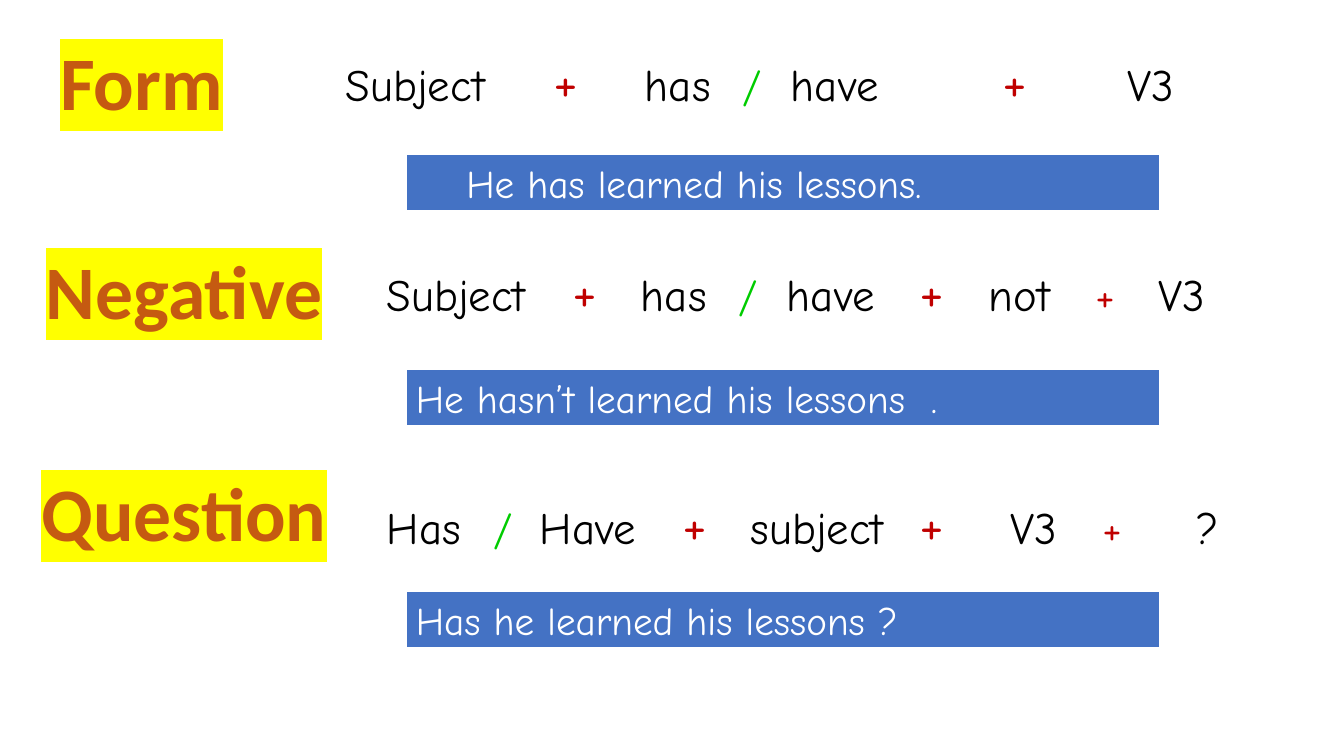
from dataclasses import dataclass

from lxml.etree import SubElement
from pptx import Presentation
from pptx.dml.color import RGBColor as RGB
from pptx.enum.shapes import MSO_SHAPE as Shape
from pptx.enum.text import MSO_ANCHOR as Anchor, MSO_AUTO_SIZE as Auto, PP_ALIGN as Align
from pptx.oxml import parse_xml
from pptx.oxml.ns import nsdecls, qn
from pptx.util import Emu, Pt

SCALE = 914400 / 100.8


def px(count):
    return Emu(round(count * SCALE))


@dataclass(frozen=True)
class Theme:
    ink: str = "000000"
    white: str = "FFFFFF"
    blue: str = "4472C4"
    rust: str = "C55A11"
    yellow: str = "FFFF00"
    red: str = "C00000"
    green: str = "00CC00"
    head_font: str = "Calibri"
    body_font: str = "Comic Neue"
    head_size: int = 54
    plus_size: int = 40
    word_size: int = 32
    bar_size: int = 28


class Board:
    def __init__(self, slide, theme):
        self.slide = slide
        self.theme = theme

    def style(self, run, font, size, color, bold=None):
        run.font.name = font
        run.font.size = Pt(size)
        run.font.color.rgb = RGB.from_string(color)
        run.font.bold = bold

    def box(self, left, top, width, height):
        shape = self.slide.shapes.add_textbox(px(left), px(top), px(width), px(height))
        frame = shape.text_frame
        frame.word_wrap = True
        frame.auto_size = Auto.SHAPE_TO_FIT_TEXT
        return frame

    def heading(self, text, left, top, width):
        theme = self.theme
        para = self.box(left, top, width, 102).paragraphs[0]
        para.text = text
        para.alignment = Align.CENTER
        run = para.runs[0]
        self.style(run, theme.head_font, theme.head_size, theme.rust, True)
        props = run.font._element
        props.insert(0, parse_xml(
            f'<a:ln w="9525" {nsdecls("a")}><a:solidFill>'
            f'<a:srgbClr val="{theme.white}"/></a:solidFill></a:ln>'))
        props.find(qn("a:solidFill")).addnext(parse_xml(
            f'<a:highlight {nsdecls("a")}><a:srgbClr val="{theme.yellow}"/></a:highlight>'))

    def formula(self, left, top, parts):
        """Set (word, x) parts on one line, each at a tab stop at its slide x."""
        theme = self.theme
        start = parts[0][1]
        frame = self.box(left, top, 923, 78)
        frame.margin_left = px(start - left)
        para = frame.paragraphs[0]
        tabs = SubElement(para._p.get_or_add_pPr(), qn("a:tabLst"))
        colors = {"+": theme.red, "++": theme.red, "/": theme.green}
        for word, x in parts:
            run = para.add_run()
            run.text = word[0] if word == "++" else word
            if x > start:
                SubElement(tabs, qn("a:tab"), pos=str(px(x - start)), algn="l")
                run.text = "\t" + run.text
            size = theme.plus_size if word == "++" else theme.word_size
            self.style(run, theme.body_font, size, colors.get(word, theme.ink))

    def bar(self, text, top, level):
        theme = self.theme
        shape = self.slide.shapes.add_shape(
            Shape.RECTANGLE, px(406), px(top), px(754), px(57))
        shape.shadow.inherit = False
        shape.fill.solid()
        shape.fill.fore_color.rgb = RGB.from_string(theme.blue)
        shape.line.color.rgb = RGB.from_string(theme.white)
        shape.line.width = Pt(1.5)
        frame = shape.text_frame
        frame.word_wrap = True
        frame.auto_size = Auto.SHAPE_TO_FIT_TEXT
        frame.vertical_anchor = Anchor.MIDDLE
        para = frame.paragraphs[0]
        para.text = text
        para.alignment = Align.LEFT
        para.level = level
        para._p.get_or_add_pPr().set("marL", str(level * 457200))
        self.style(para.runs[0], theme.body_font, theme.bar_size, theme.white)


# In a formula, "++" stands for the large plus sign.
ROWS = [
    (("Form", -17, 30, 317),
     (328, 41, [("Subject", 346), ("++", 554), ("has", 645), ("/", 743),
                ("have", 791), ("++", 1003), ("V3", 1128)]),
     ("He has learned his lessons.", 154, 1)),
    (("Negative", 0, 239, 368),
     (368, 251, [("Subject", 387), ("++", 573), ("has", 641), ("/", 739),
                 ("have", 787), ("++", 920), ("not", 989), ("+", 1096),
                 ("V3", 1159)]),
     ("He hasn’t learned his lessons  .", 369, 0)),
    (("Question", 0, 461, 368),
     (368, 484, [("Has", 387), ("/", 494), ("Have", 540), ("++", 683),
                 ("subject", 751), ("++", 920), ("V3", 1011), ("+", 1103),
                 ("?", 1197)]),
     ("Has he learned his lessons ?", 591, 0)),
]


def main():
    deck = Presentation()
    deck.slide_width, deck.slide_height = px(1344), px(756)
    board = Board(deck.slides.add_slide(deck.slide_layouts[6]), Theme())
    for heading, formula, bar in ROWS:
        board.heading(*heading)
        board.formula(*formula)
        board.bar(*bar)
    deck.save("out.pptx")


if __name__ == "__main__":
    main()
